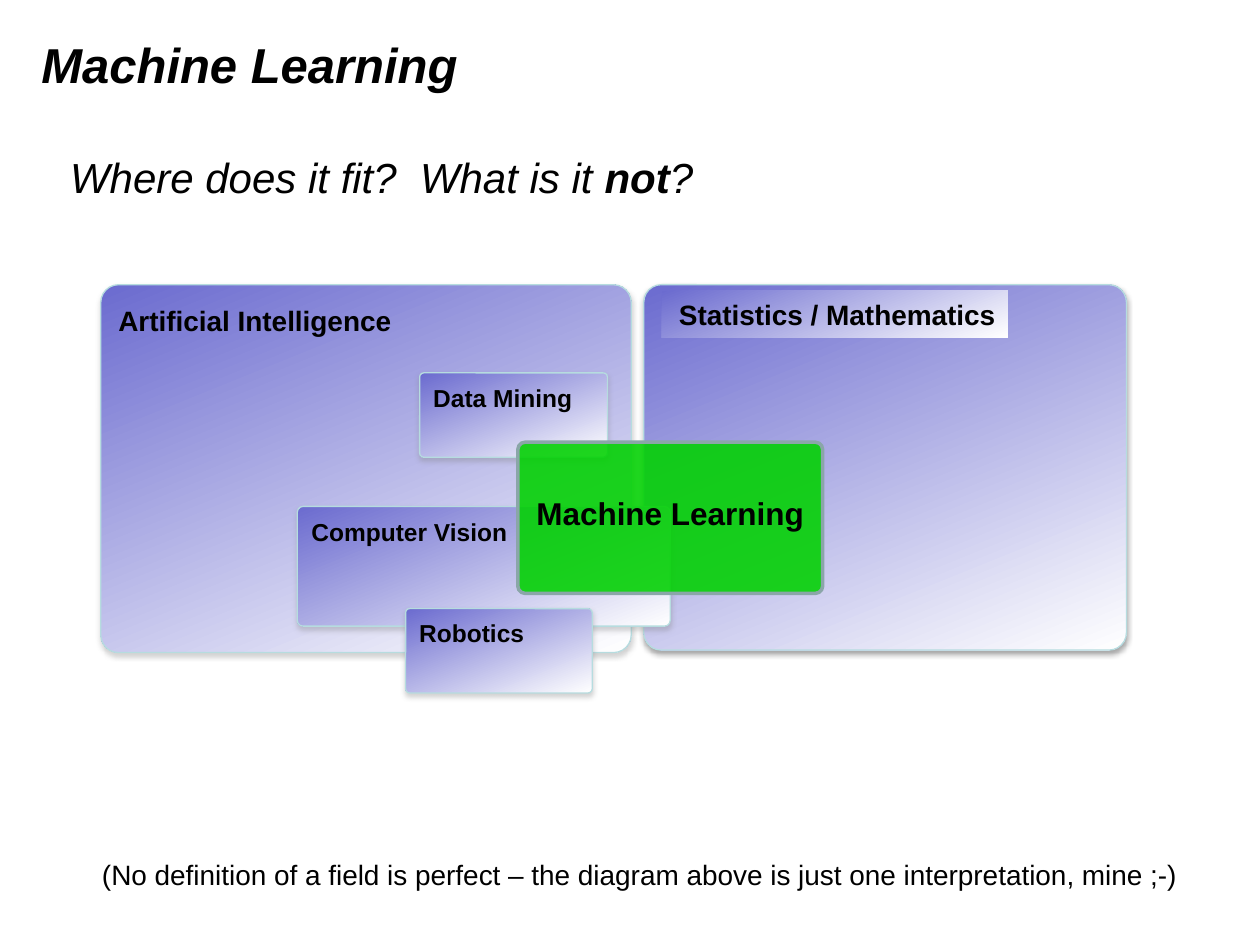
"""Build a slide that places machine learning among its neighbouring fields."""
import lxml.etree
import pptx
import pptx.dml.color
import pptx.enum.shapes
import pptx.enum.text
import pptx.oxml.ns
import pptx.util

Pt = pptx.util.Pt
RGB = pptx.dml.color.RGBColor.from_string
SHAPE = pptx.enum.shapes.MSO_SHAPE
ALIGN = pptx.enum.text.PP_ALIGN
ANCHOR = pptx.enum.text.MSO_ANCHOR
qn = pptx.oxml.ns.qn

THEME = {
    "font": "Arial", "ink": "000000",
    "grad": ("6B6BCF", "FFFFFF"), "angle": 68, "edge": "B6DCDF", "edge_width": 0.75,
    "focus": "00D100", "focus_alpha": 88, "focus_edge": "8AA6A8", "focus_width": 2,
    "corner": 0.048, "shadow_alpha": 35, "shadow_blur": 3.1, "shadow_dist": 1.8,
    "title": 28, "question": 24, "focus_label": 18, "area": 16, "field": 14, "note": 16,
}

TITLE = ("Machine Learning", (16.5, 6.5, 685.5, 59.75))
QUESTION = ([("Where does it fit?  What is it ", False), ("not", True), ("?", False)],
            (33, 81.4, 643, 66))
NOTE = ("(No definition of a field is perfect – the diagram above is just one "
        "interpretation, mine ;-)", (16.5, 486.7, 698.4, 26.6))
AREAS = [
    ("Artificial Intelligence", (57.6, 162.7, 303.1, 210.2), "area", 7.5, "808080"),
    ("", (367.9, 162.7, 275.8, 208.8), "area", 7.5, "000000"),
]
AREA_TAG = ("Statistics / Mathematics", (378, 166.3, 198, 26.6))
FIELDS = [
    ("Computer Vision", (169.9, 289.4, 213.1, 68.4), "field", 5, "808080"),
    ("Data Mining", (239.8, 213.1, 107.3, 48.2), "field", 5, "808080"),
]
FOCUS = ("Machine Learning", (295.9, 252.7, 174.2, 86.4))
FRONT_FIELD = ("Robotics", (231.8, 347.8, 106.6, 48.2), "field", 5, "808080")


def assign(obj, values):
    """Set every attribute named in values."""
    for name, value in values.items():
        setattr(obj, name, value)


def write(sp, runs, size, align=ALIGN.LEFT, italic=False, **frame):
    """Fill a shape with one paragraph of (text, bold) runs."""
    tf = sp.text_frame
    assign(tf, {"word_wrap": True, **frame})
    p = tf.paragraphs[0]
    p.alignment = align
    for text, bold in runs:
        r = p.add_run()
        r.text = text
        assign(r.font, {"name": THEME["font"], "size": Pt(THEME[size]),
                        "bold": bold, "italic": italic})
        r.font.color.rgb = RGB(THEME["ink"])


def add_box(slide, kind, box):
    """Add a preset shape without a shadow."""
    sp = slide.shapes.add_shape(kind, *map(Pt, box))
    sp.shadow.inherit = False
    if kind == SHAPE.ROUNDED_RECTANGLE:
        sp.adjustments[0] = THEME["corner"]
    return sp


def set_line(sp, color, width):
    """Give a shape a solid outline."""
    sp.line.color.rgb = RGB(color)
    sp.line.width = Pt(width)


def set_gradient(sp):
    """Fill a shape with the theme gradient."""
    sp.fill.gradient()
    sp.fill.gradient_angle = 360 - THEME["angle"]
    for position, (stop, color) in enumerate(zip(sp.fill.gradient_stops, THEME["grad"])):
        stop.position = position
        stop.color.rgb = RGB(color)


def add_alpha(clr, percent):
    """Make a colour element partly transparent."""
    lxml.etree.SubElement(clr, qn("a:alpha"), val=str(percent * 1000))


def set_shadow(sp, color):
    """Add a soft shadow straight below a shape."""
    effects = sp._element.spPr.find(qn("a:effectLst"))
    shadow = lxml.etree.SubElement(
        effects, qn("a:outerShdw"), blurRad=str(Pt(THEME["shadow_blur"])),
        dist=str(Pt(THEME["shadow_dist"])), dir="5400000", rotWithShape="0")
    clr = lxml.etree.SubElement(shadow, qn("a:srgbClr"), val=color)
    add_alpha(clr, THEME["shadow_alpha"])


def add_field(slide, label, box, size, inset, shadow):
    """Add a gradient panel with its label at the top left."""
    sp = add_box(slide, SHAPE.ROUNDED_RECTANGLE, box)
    set_gradient(sp)
    set_line(sp, THEME["edge"], THEME["edge_width"])
    set_shadow(sp, shadow)
    if label:
        write(sp, [(label, True)], size, vertical_anchor=ANCHOR.TOP, margin_top=Pt(inset))


def add_area_tag(slide, label, box):
    """Add the borderless gradient tag that names an area."""
    sp = add_box(slide, SHAPE.RECTANGLE, box)
    set_gradient(sp)
    sp.line.fill.background()
    write(sp, [(label, True)], "area", ALIGN.RIGHT, word_wrap=False,
          vertical_anchor=ANCHOR.TOP)


def add_focus(slide, label, box):
    """Add the translucent panel that overlaps the other fields."""
    sp = add_box(slide, SHAPE.ROUNDED_RECTANGLE, box)
    sp.fill.solid()
    sp.fill.fore_color.rgb = RGB(THEME["focus"])
    add_alpha(sp._element.spPr.find(qn("a:solidFill"))[0], THEME["focus_alpha"])
    set_line(sp, THEME["focus_edge"], THEME["focus_width"])
    write(sp, [(label, True)], "focus_label", ALIGN.CENTER,
          vertical_anchor=ANCHOR.MIDDLE, margin_bottom=Pt(9))


def main():
    """Assemble and save the slide."""
    prs = pptx.Presentation()
    assign(prs, {"slide_width": Pt(720), "slide_height": Pt(540)})
    slide = prs.slides.add_slide(prs.slide_layouts[5])

    text, box = TITLE
    title = slide.shapes.title
    assign(title, dict(zip(("left", "top", "width", "height"), map(Pt, box))))
    write(title, [(text, True)], "title", italic=True, vertical_anchor=ANCHOR.MIDDLE)

    runs, box = QUESTION
    sp = slide.shapes.add_textbox(*map(Pt, box))
    write(sp, runs, "question", italic=True, margin_top=Pt(5))

    for area in AREAS:
        add_field(slide, *area)
    add_area_tag(slide, *AREA_TAG)
    for field in FIELDS:
        add_field(slide, *field)
    add_focus(slide, *FOCUS)
    add_field(slide, *FRONT_FIELD)

    text, box = NOTE
    sp = slide.shapes.add_textbox(*map(Pt, box))
    write(sp, [(text, False)], "note", ALIGN.CENTER)
    prs.save("out.pptx")


if __name__ == "__main__":
    main()
